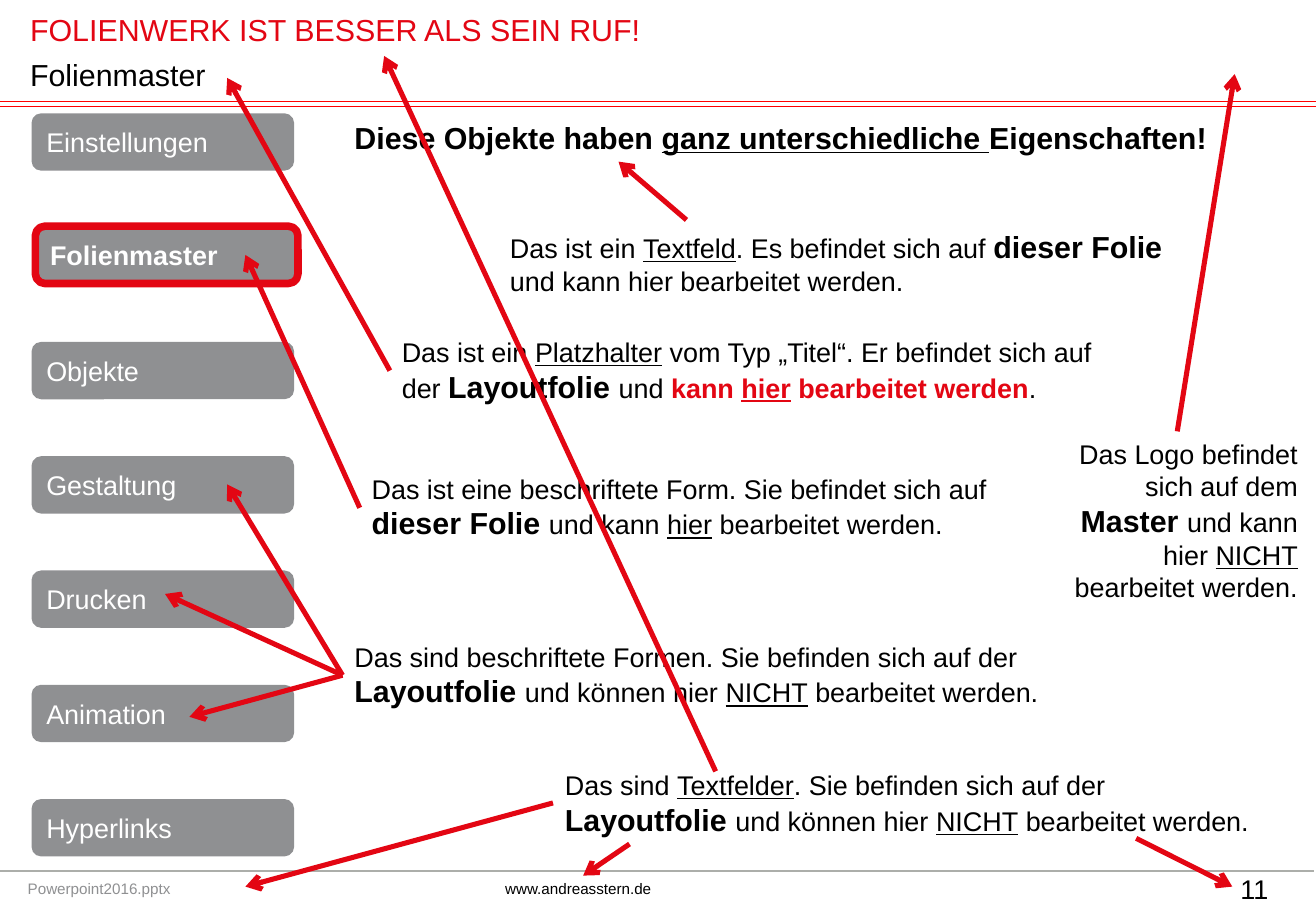
from dataclasses import dataclass

from lxml.etree import SubElement
from pptx import Presentation
from pptx.dml.color import RGBColor
from pptx.enum.shapes import MSO_CONNECTOR as Connector, MSO_SHAPE as Shape
from pptx.enum.text import MSO_ANCHOR as Anchor, PP_ALIGN as Align
from pptx.oxml.ns import qn
from pptx.util import Cm, Pt


@dataclass(frozen=True)
class Theme:
    font: str = "Arial"
    red: str = "E30613"
    rule_red: str = "FF0000"
    grey: str = "8F9092"
    rule_grey: str = "ACAEAA"
    black: str = "000000"
    white: str = "FFFFFF"
    heading: int = 18
    body: int = 16
    footer: int = 9


THEME = Theme()
UNDERLINED = {"underline": True}
STRONG = {"size": THEME.heading, "bold": True}
STRONG_UNDERLINED = STRONG | UNDERLINED
ALERT = {"color": THEME.red, "bold": True}
ALERT_UNDERLINED = ALERT | UNDERLINED


class SlideBuilder:
    def __init__(self, slide, theme):
        self.shapes = slide.shapes
        self.theme = theme

    def format_run(self, run, size=None, color=None, bold=False, underline=False):
        font = run.font
        font.name = self.theme.font
        font.size = Pt(size or self.theme.body)
        font.color.rgb = RGBColor.from_string(color or self.theme.black)
        font.bold = bold
        font.underline = underline

    def text(self, left, top, width, height, parts, align=Align.LEFT,
             anchor=Anchor.TOP, wrap=True, tab=None):
        """Place a text box; parts is a list of (wording, run style) pairs."""
        frame = self.shapes.add_textbox(Cm(left), Cm(top), Cm(width), Cm(height)).text_frame
        frame.word_wrap = wrap
        frame.vertical_anchor = anchor
        paragraph = frame.paragraphs[0]
        paragraph.alignment = align
        if tab:
            tabs = SubElement(paragraph._p.get_or_add_pPr(), qn("a:tabLst"))
            SubElement(tabs, qn("a:tab"), pos=str(Cm(tab)), algn="l")
        for wording, style in parts:
            run = paragraph.add_run()
            run.text = wording
            self.format_run(run, **style)

    def button(self, left, top, label, active=False):
        button = self.shapes.add_shape(
            Shape.ROUNDED_RECTANGLE, Cm(left), Cm(top), Cm(5.49), Cm(1.2))
        button.shadow.inherit = False
        button.fill.solid()
        button.fill.fore_color.rgb = RGBColor.from_string(self.theme.grey)
        if active:
            button.line.color.rgb = RGBColor.from_string(self.theme.red)
            button.line.width = Pt(4.5)
        else:
            button.line.fill.background()
        frame = button.text_frame
        frame.text = label
        frame.vertical_anchor = Anchor.MIDDLE
        paragraph = frame.paragraphs[0]
        paragraph.alignment = Align.LEFT
        self.format_run(paragraph.runs[0], color=self.theme.white, bold=active)

    def line(self, start, end, color, width):
        line = self.shapes.add_connector(
            Connector.STRAIGHT, *(Cm(value) for value in (*start, *end)))
        line.line.color.rgb = RGBColor.from_string(color)
        line.line.width = Pt(width)
        SubElement(line._element.spPr, qn("a:effectLst"))
        return line

    def arrow(self, start, end):
        arrow = self.line(start, end, self.theme.red, 3)
        SubElement(arrow.line._get_or_add_ln(), qn("a:tailEnd"), type="arrow")


SECTIONS = ["Einstellungen", "Folienmaster", "Objekte", "Gestaltung",
            "Drucken", "Animation", "Hyperlinks"]
ACTIVE_SECTION = "Folienmaster"
SECTION_PITCH = 2.39

# left, top, width, parts
EXPLANATIONS = [
    (10.41, 4.65, 14.2, [
        ("Das ist ein ", {}), ("Textfeld", UNDERLINED),
        (". Es befindet sich auf ", {}), ("dieser Folie ", STRONG),
        ("und kann hier bearbeitet werden.", {})]),
    (8.15, 6.89, 15.39, [
        ("Das ist ein ", {}), ("Platzhalter", UNDERLINED),
        (" vom Typ „Titel“. Er befindet sich auf der ", {}),
        ("Layoutfolie ", STRONG), ("und ", {}), ("kann ", ALERT),
        ("hier", ALERT_UNDERLINED), (" bearbeitet werden", ALERT), (".", {})]),
    (7.52, 9.75, 15.01, [
        ("Das ist eine beschriftete Form. Sie befindet sich auf ", {}),
        ("dieser Folie ", STRONG), ("und kann ", {}), ("hier", UNDERLINED),
        (" bearbeitet werden.", {})]),
    (7.16, 13.26, 15.01, [
        ("Das sind beschriftete Formen. Sie befinden sich auf der ", {}),
        ("Layoutfolie ", STRONG), ("und können hier ", {}),
        ("NICHT", UNDERLINED), (" bearbeitet werden.", {})]),
    (11.56, 15.95, 14.83, [
        ("Das sind ", {}), ("Textfelder", UNDERLINED),
        (". Sie befinden sich auf der ", {}), ("Layoutfolie ", STRONG),
        ("und können hier ", {}), ("NICHT", UNDERLINED),
        (" bearbeitet werden.", {})]),
]

LAYOUT_BUTTONS_ORIGIN = (7.16, 14.12)
ARROWS = [
    ((14.35, 4.6), (12.93, 3.38)),
    ((8.15, 7.75), (4.75, 1.63)),
    ((7.52, 10.62), (5.13, 5.33)),
    *((LAYOUT_BUTTONS_ORIGIN, target)
      for target in [(3.96, 14.99), (3.45, 12.42), (4.75, 10.13)]),
    ((11.56, 16.79), (5.13, 18.54)),
    ((13.16, 17.65), (12.19, 18.31)),
    ((14.96, 16.13), (8.03, 1.17)),
    ((23.75, 17.53), (25.76, 18.54)),
    ((24.61, 9.02), (25.81, 1.55)),
]


def main():
    deck = Presentation()
    deck.slide_width, deck.slide_height = Cm(27.51), Cm(19.05)
    page = SlideBuilder(deck.slides.add_slide(deck.slide_layouts[6]), THEME)

    for index, section in enumerate(SECTIONS):
        active = section == ACTIVE_SECTION
        left, nudge = (0.74, -0.03) if active else (0.66, 0)
        page.button(left, 2.37 + index * SECTION_PITCH + nudge, section, active)

    for y in (2.13, 2.22):
        page.line((0, y), (27.51, y), THEME.rule_red, 0.75)
    page.line((0, 18.21), (27.46, 18.21), THEME.rule_grey, 1)

    page.text(0.38, 0.1, 22.17, 1.02, [
        ("FOLIENWERK IST BESSER ALS SEIN RUF!",
         {"size": THEME.heading, "color": THEME.red})])
    page.text(0.38, 1.17, 22.17, 0.76, [("Folienmaster", {"size": THEME.heading})],
              anchor=Anchor.MIDDLE)
    page.text(0.33, 18.26, 21.89, 0.64, [
        ("Powerpoint2016.pptx", {"size": THEME.footer, "color": THEME.grey}),
        ("\twww.andreasstern.de", {"size": THEME.footer})], tab=9.98)
    page.text(25.68, 18.12, 1.63, 0.94, [("11", {})], wrap=False)

    page.text(7.16, 2.36, 19, 1.02, [
        ("Diese Objekte haben ", STRONG),
        ("ganz unterschiedliche ", STRONG_UNDERLINED),
        ("Eigenschaften!", STRONG)])
    for left, top, width, parts in EXPLANATIONS:
        page.text(left, top, width, 1.7, parts)
    page.text(21.82, 9.02, 5.56, 3.76, [
        ("Das Logo befindet sich auf dem ", {}), ("Master ", STRONG),
        ("und kann hier ", {}), ("NICHT", UNDERLINED),
        (" bearbeitet werden.", {})], align=Align.RIGHT)

    for start, end in ARROWS:
        page.arrow(start, end)

    deck.save("out.pptx")


if __name__ == "__main__":
    main()
